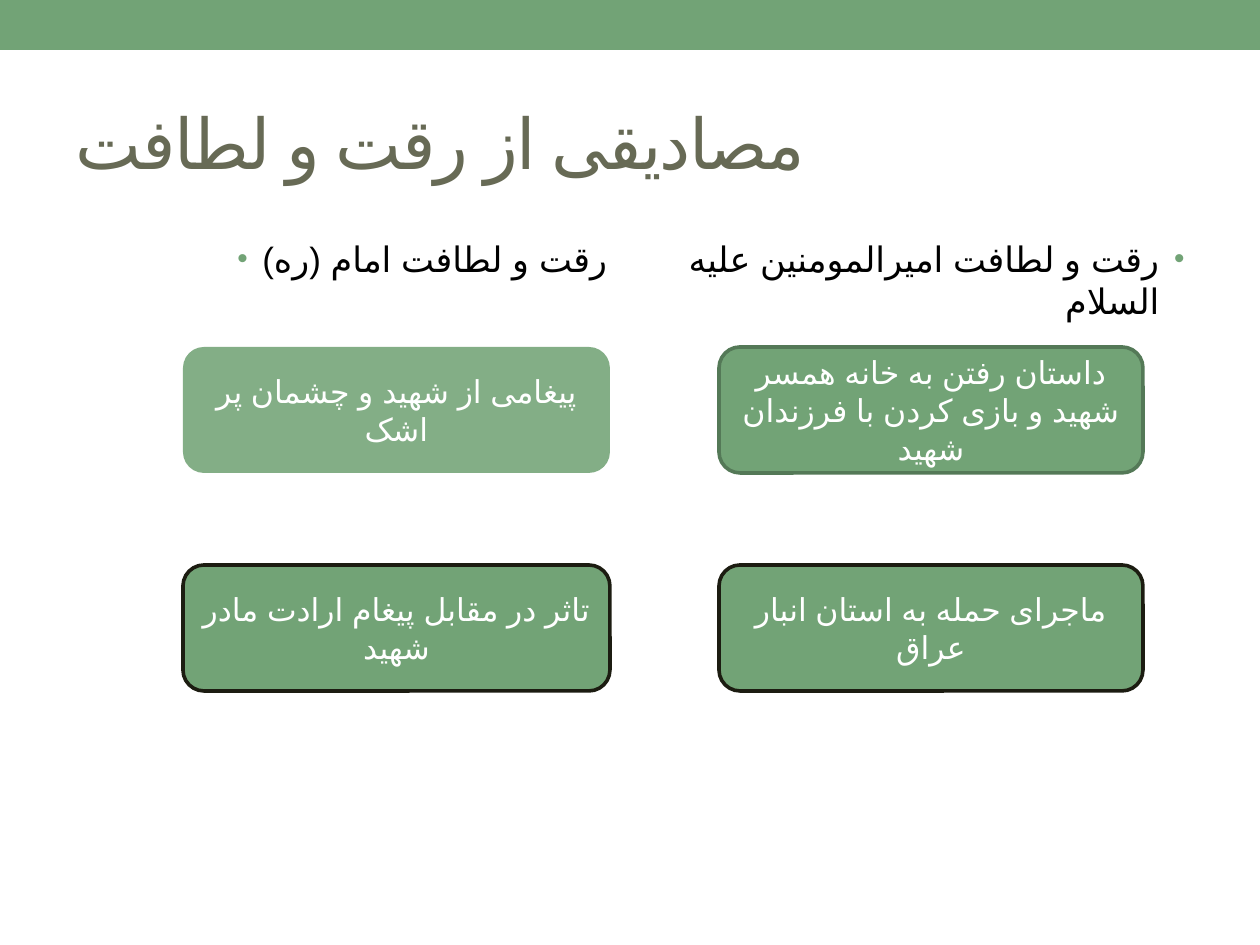
import pptx
import pptx.util
import pptx.dml.color
import pptx.enum.shapes
import pptx.enum.text
import pptx.oxml
import pptx.oxml.ns
import lxml.etree

HUES = {
    "green": "72A376", "edge": "547957", "dark": "1C1C11",
    "title": "676A55", "text": "000000", "white": "FFFFFF",
}
FONT = "Arial"
ALIGN = pptx.enum.text.PP_ALIGN
ANCHOR = pptx.enum.text.MSO_ANCHOR
KIND = pptx.enum.shapes.MSO_SHAPE
qn = pptx.oxml.ns.qn


def px(count):
    return round(count * 914400 / 126)


def hue(name):
    return pptx.dml.color.RGBColor.from_string(HUES[name])


def place(shape, box):
    shape.left, shape.top, shape.width, shape.height = map(px, box)


def write(frame, words, size, color, align, anchor):
    """Fill a text frame with one run and return its paragraph and run."""
    frame.word_wrap = True
    frame.auto_size = pptx.enum.text.MSO_AUTO_SIZE.NONE
    frame.vertical_anchor = anchor
    para = frame.paragraphs[0]
    para.alignment = align
    run = para.add_run()
    run.text = words
    run.font.size = pptx.util.Pt(size)
    run.font.name = FONT
    run.font.color.rgb = hue(color)
    # Persian text needs its language and complex-script font
    run.font._element.set("lang", "fa-IR")
    lxml.etree.SubElement(run.font._element, qn("a:cs"), typeface=FONT)
    return para, run


def add_block(slide, kind, box, fill, line=None):
    shape = slide.shapes.add_shape(kind, *map(px, box))
    shape.shadow.inherit = False
    shape.fill.solid()
    shape.fill.fore_color.rgb = hue(fill)
    if line:
        shape.line.color.rgb = hue(line)
        shape.line.width = pptx.util.Pt(2.08)
    else:
        shape.line.fill.background()
    return shape


def add_title(slide, box, words):
    title = slide.shapes.title
    place(title, box)
    _, run = write(title.text_frame, words, 40, "title", ALIGN.LEFT, ANCHOR.MIDDLE)
    run.font._element.set("spc", "-100")


def add_list(holder, box, words, rtl):
    place(holder, box)
    para, _ = write(holder.text_frame, words, 20, "text", ALIGN.RIGHT, ANCHOR.TOP)
    props = para._p.get_or_add_pPr()
    props.set("marL", str(px(25)))
    props.set("indent", str(-px(25)))
    props.set("rtl", str(int(rtl)))
    # Space before, then bullet colour, size and sign
    gap = lxml.etree.SubElement(props, qn("a:spcBef"))
    lxml.etree.SubElement(gap, qn("a:spcPct"), val="20000")
    tint = lxml.etree.SubElement(props, qn("a:buClr"))
    lxml.etree.SubElement(tint, qn("a:srgbClr"), val=HUES["green"])
    lxml.etree.SubElement(props, qn("a:buSzPct"), val="85000")
    lxml.etree.SubElement(props, qn("a:buFont"), typeface=FONT)
    lxml.etree.SubElement(props, qn("a:buChar"), char="•")


def add_cards(slide, box, cards):
    """Stack rounded cards in the box, evenly spaced."""
    left, top, width, height = box
    tall = 126
    step = (height - tall) // (len(cards) - 1)
    for row, (words, line) in enumerate(cards):
        spot = (left, top + row * step, width, tall)
        card = add_block(slide, KIND.ROUNDED_RECTANGLE, spot, "green", line)
        write(card.text_frame, words, 18, "white", ALIGN.CENTER, ANCHOR.MIDDLE)
        if not line:  # a card with no edge is slightly see-through
            color = card._element.spPr.find(qn("a:solidFill"))[0]
            lxml.etree.SubElement(color, qn("a:alpha"), val="88000")


def main():
    deck = pptx.Presentation()
    deck.slide_width, deck.slide_height = px(1260), px(945)
    slide = deck.slides.add_slide(deck.slide_layouts[3])
    _, west, east = slide.placeholders

    # Top band and title
    add_block(slide, KIND.RECTANGLE, (0, 0, 1260, 50), "green")
    add_title(slide, (63, 73, 1134, 136), "مصادیقی از رقت و لطافت")

    # Two list columns
    add_list(west, (63, 231, 557, 650), "رقت و لطافت امام (ره)", False)
    add_list(east, (640, 231, 557, 650),
             "رقت و لطافت امیرالمومنین علیه السلام", True)

    # Cards under each list
    add_cards(slide, (719, 347, 424, 344), [
        ("داستان رفتن به خانه همسر شهید و بازی کردن با فرزندان شهید", "edge"),
        ("ماجرای حمله به استان انبار عراق", "dark"),
    ])
    add_cards(slide, (183, 347, 427, 344), [
        ("پیغامی از شهید و چشمان پر اشک", None),
        ("تاثر در مقابل پیغام ارادت مادر شهید", "dark"),
    ])
    deck.save("out.pptx")


if __name__ == "__main__":
    main()
